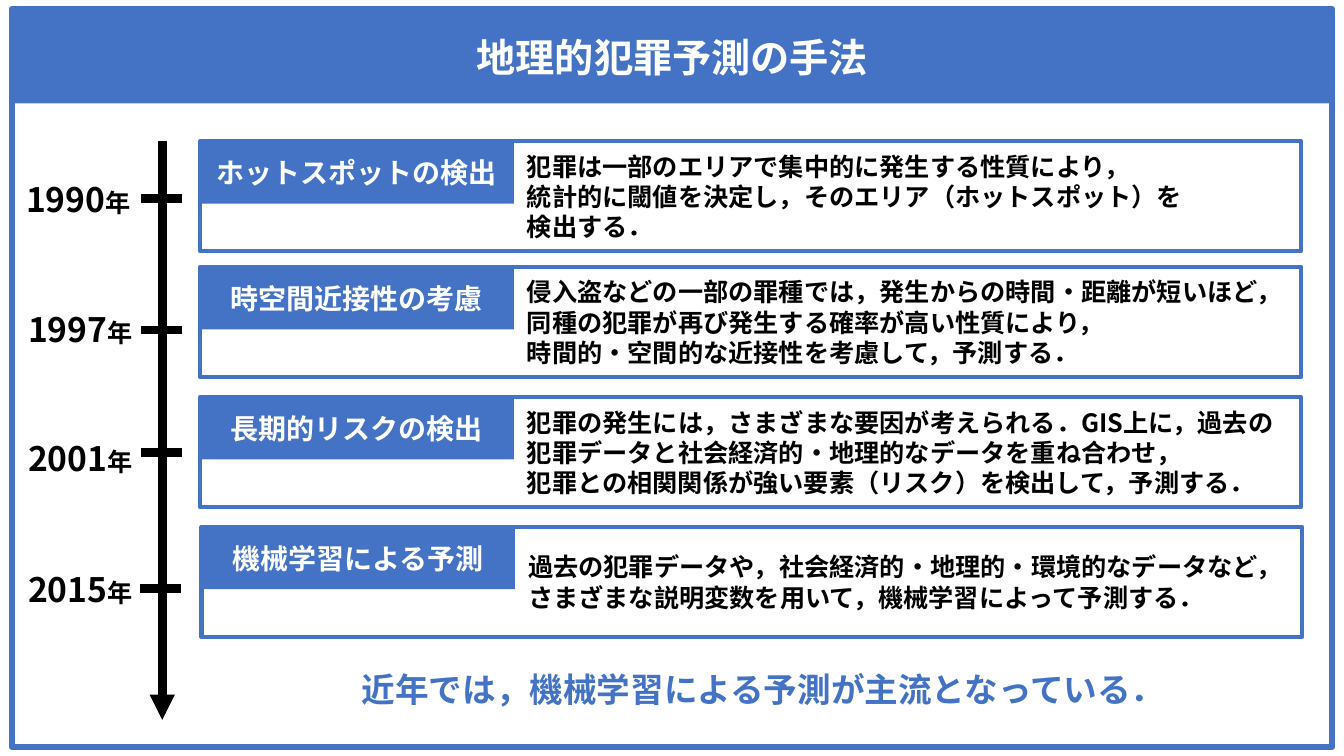
from lxml.etree import SubElement
from pptx import Presentation
from pptx.dml.color import RGBColor
from pptx.enum.shapes import MSO_CONNECTOR, MSO_SHAPE
from pptx.enum.text import MSO_ANCHOR, PP_ALIGN
from pptx.oxml.ns import qn
from pptx.util import Cm, Pt

BLUE, BLACK, WHITE = "4472C4", "000000", "FFFFFF"
FONT = "Noto Sans CJK JP"


def color(value):
    """Turn a hex string into a colour."""
    return RGBColor.from_string(value)


class TimelineSlide:
    """Draw styled elements on one slide."""

    def __init__(self, page):
        """Keep the slide to draw on."""
        self.shapes = page.shapes

    def style(self, span, size, ink):
        """Apply the bold slide font to a run."""
        span.font.size = Pt(size)
        span.font.bold = True
        span.font.name = FONT
        span.font.color.rgb = color(ink)
        SubElement(span.font._element, qn("a:ea"), typeface=FONT)

    def set_text(self, box, text, size, ink, align):
        """Fill a box with vertically centred text."""
        frame = box.text_frame
        frame.text = text
        frame.word_wrap = True
        frame.vertical_anchor = MSO_ANCHOR.MIDDLE
        for para in frame.paragraphs:
            para.alignment = align
            for span in para.runs:
                self.style(span, size, ink)

    def rectangle(self, left, top, width, height, fill=None, border=None):
        """Add a rectangle with a fill or a border."""
        box = self.shapes.add_shape(
            MSO_SHAPE.RECTANGLE, Cm(left), Cm(top), Cm(width), Cm(height))
        box.shadow.inherit = False
        if fill:
            box.fill.solid()
            box.fill.fore_color.rgb = color(fill)
        else:
            box.fill.background()
        if border:
            box.line.color.rgb = color(BLUE)
            box.line.width = Pt(border)
        else:
            box.line.fill.background()
        return box

    def text(self, left, top, width, height, text, size, ink, align=PP_ALIGN.LEFT):
        """Add a text box."""
        box = self.shapes.add_textbox(Cm(left), Cm(top), Cm(width), Cm(height))
        self.set_text(box, text, size, ink, align)
        return box

    def line(self, x1, y1, x2, y2, arrow=False):
        """Add a thick black line, with an arrowhead on request."""
        line = self.shapes.add_connector(
            MSO_CONNECTOR.STRAIGHT, Cm(x1), Cm(y1), Cm(x2), Cm(y2))
        line.line.color.rgb = color(BLACK)
        line.line.width = Pt(6)
        properties = line._element.spPr
        if arrow:
            SubElement(properties.find(qn("a:ln")), qn("a:tailEnd"), type="triangle")
        SubElement(properties, qn("a:effectLst"))

    def year(self, left, top, year):
        """Add a year label with a smaller unit."""
        box = self.text(left, top, 3.48, 1.27, year, 24, BLACK)
        unit = box.text_frame.paragraphs[0].add_run()
        unit.text = "年"
        self.style(unit, 18, BLACK)

    def method(self, left, top, name, description):
        """Add a framed method with its heading and description."""
        self.rectangle(left, top, 27.74, 2.77, border=3)
        heading = self.rectangle(left - 0.02, top, 7.92, 1.57, fill=BLUE)
        self.set_text(heading, name, 20, WHITE, PP_ALIGN.CENTER)
        self.text(left + 7.98, top, 19.33, 2.77, description, 18, BLACK)


METHODS = [
    (5.05, 3.56, "ホットスポットの検出",
     "犯罪は一部のエリアで集中的に発生する性質により，\n"
     "統計的に閾値を決定し，そのエリア（ホットスポット）を\n"
     "検出する．"),
    (5.05, 6.73, "時空間近接性の考慮",
     "侵入盗などの一部の罪種では，発生からの時間・距離が短いほど，\n"
     "同種の犯罪が再び発生する確率が高い性質により，\n"
     "時間的・空間的な近接性を考慮して，予測する．"),
    (5.05, 10.01, "長期的リスクの検出",
     "犯罪の発生には，さまざまな要因が考えられる．GIS上に，過去"
     "の犯罪データと社会経済的・地理的なデータを重ね合わせ，\n"
     "犯罪との相関関係が強い要素（リスク）を検出して，予測する．"),
    (5.08, 13.28, "機械学習による予測",
     "過去の犯罪データや，社会経済的・地理的・環境的なデータなど，\n"
     "さまざまな説明変数を用いて，機械学習によって予測する．"),
]
YEARS = [
    ("1990", 0.41, 4.37, 3.56, 5.0),
    ("1997", 0.46, 7.67, 3.56, 8.31),
    ("2001", 0.46, 10.9, 3.56, 11.4),
    ("2015", 0.46, 14.22, 3.53, 14.83),
]


def main():
    """Build and save the slide."""
    deck = Presentation()
    deck.slide_width, deck.slide_height = Cm(33.87), Cm(19.05)
    slide = TimelineSlide(deck.slides.add_slide(deck.slide_layouts[6]))

    slide.rectangle(0.3, 0.25, 33.27, 2.36, fill=BLUE)
    slide.text(7.47, 0.71, 18.95, 1.45, "地理的犯罪予測の手法", 28, WHITE, PP_ALIGN.CENTER)
    for method in METHODS:
        slide.method(*method)
    slide.line(4.09, 3.56, 4.09, 18.14, arrow=True)
    for year, left, top, tick_left, tick_top in YEARS:
        slide.year(left, top, year)
        slide.line(tick_left, tick_top, tick_left + 1.04, tick_top)
    slide.text(7.98, 16.74, 22.5, 1.27, "近年では，機械学習による予測が主流となっている．",
               24, BLUE, PP_ALIGN.CENTER)
    slide.rectangle(0.3, 0.23, 33.27, 18.59, border=4.5)
    deck.save("out.pptx")


if __name__ == "__main__":
    main()
